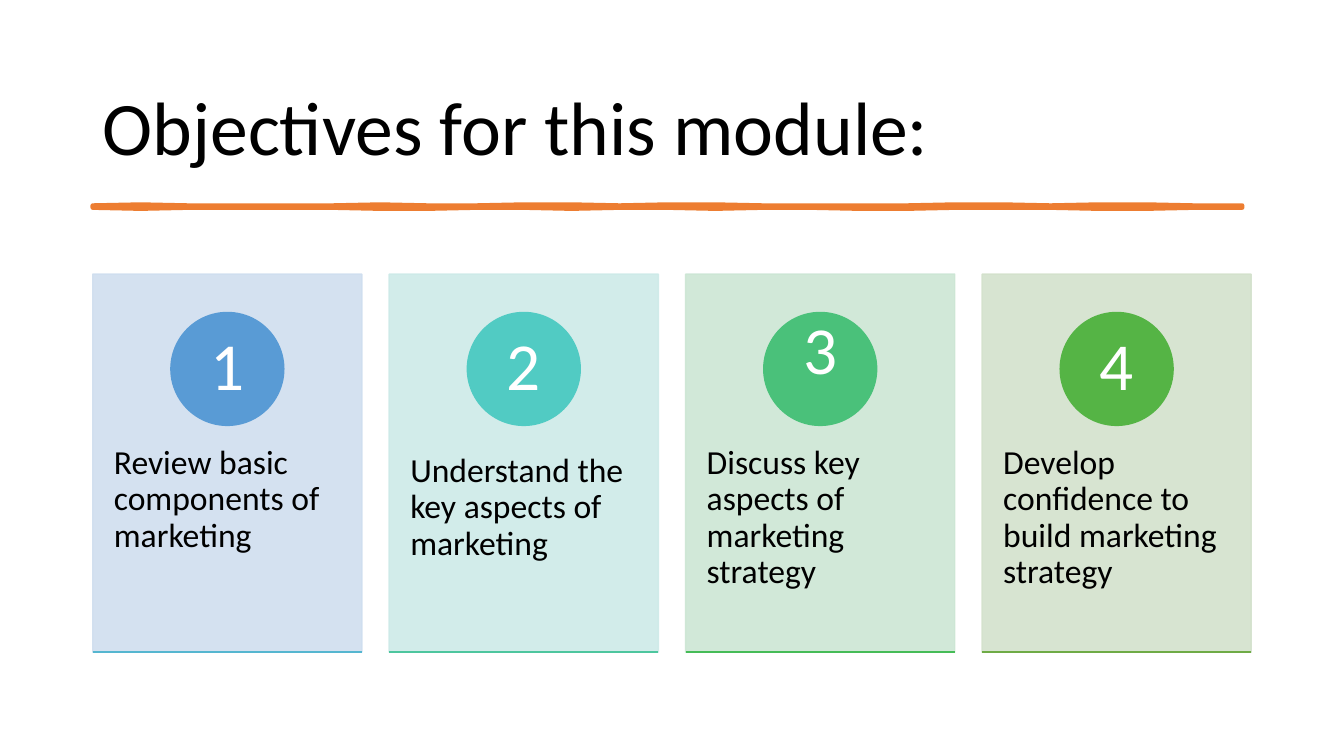
import pptx
import pptx.util
import pptx.dml.color
import pptx.enum.shapes
import pptx.enum.text
import pptx.oxml.ns
import lxml.etree
from dataclasses import dataclass

Inches = pptx.util.Inches
Pt = pptx.util.Pt
Kind = pptx.enum.shapes.MSO_SHAPE
Align = pptx.enum.text.PP_ALIGN
Anchor = pptx.enum.text.MSO_ANCHOR


@dataclass(frozen=True)
class Theme:
    font: str = "Calibri"
    ink: str = "000000"
    white: str = "FFFFFF"
    accent: str = "ED7D31"
    title: int = 54
    number: int = 48
    body: int = 24


THEME = Theme()

# Text, panel, circle, base line, text top, number top (both within the card)
CARDS = [
    ("Review basic components of marketing", "CFDEEF", "599BD5", "55B6D0", 1.34, 0.54),
    ("Understand the key aspects of marketing", "CDEAE8", "51CBC3", "4DC69E", 1.42, 0.54),
    ("Discuss key aspects of marketing strategy", "CCE6D4", "4AC17A", "46BC57", 1.34, 0.38),
    ("Develop confidence to build marketing strategy", "D3E1CC", "55B445", "6FAB46", 1.34, 0.54),
]

# Outward swell of the brush stroke at equal steps, in hundredths of an inch
UPPER = [0, 1, 0, 0, 0, 0, 1, 0, 0, 1, 1, 0, 1, 1, 0, 0, 0, 0, 1, 1, 0, 1, 1, 0, 0]
LOWER = [0, 1, 0, 0, 0, 0, 1, 1, 0, 0, 1, 0, 0, 1, 0, 0, 1, 1, 0, 0, 0, 1, 1, 0, 0]


def rgb(code):
    return pptx.dml.color.RGBColor.from_string(code)


def paint(shape, color, width=1, alpha=None):
    """Give a shape one colour for fill and line, with alpha in percent."""
    shape.shadow.inherit = False
    shape.fill.solid()
    shape.fill.fore_color.rgb = rgb(color)
    shape.line.color.rgb = rgb(color)
    shape.line.width = Pt(width)
    if alpha is not None:
        qn = pptx.oxml.ns.qn
        for node in shape.element.spPr.iter(qn("a:srgbClr")):
            lxml.etree.SubElement(node, qn("a:alpha"), val=str(alpha * 1000))


def write(slide, box, text, size, color, pad, align=Align.LEFT, anchor=Anchor.TOP):
    """Add a text box; pad holds the side and the top/bottom insets."""
    frame = slide.shapes.add_textbox(*map(Inches, box)).text_frame
    frame.word_wrap = True
    frame.vertical_anchor = anchor
    frame.margin_left = frame.margin_right = Inches(pad[0])
    frame.margin_top = frame.margin_bottom = Inches(pad[1])
    para = frame.paragraphs[0]
    para.text = text
    para.alignment = align
    para.line_spacing = 0.9
    para.font.name = THEME.font
    para.font.size = Pt(size)
    para.font.color.rgb = rgb(color)


def stroke(slide, box):
    """Draw the uneven brush stroke under the title."""
    left, top, width, height = box
    step = width / (len(UPPER) - 1)
    edge = [(left + i * step, top - s / 100) for i, s in enumerate(UPPER)]
    base = [(left + i * step, top + height + s / 100) for i, s in enumerate(LOWER)]
    dots = [(Inches(x), Inches(y)) for x, y in edge + base[::-1]]
    pen = slide.shapes.build_freeform(*dots[0])
    pen.add_line_segments(dots[1:], close=True)
    paint(pen.convert_to_shape(), THEME.accent, 3.25)


def rule(slide, box, color):
    """Draw a line along the bottom of the box."""
    left, top, width, height = box
    ends = (left, top + height, left + width, top + height)
    line = slide.shapes.add_connector(
        pptx.enum.shapes.MSO_CONNECTOR.STRAIGHT, *map(Inches, ends))
    line.line.color.rgb = rgb(color)
    line.line.width = Pt(1)
    lxml.etree.SubElement(line.element.spPr, pptx.oxml.ns.qn("a:effectLst"))


def card(slide, box, number, text, panel, disc, base, drop, rise):
    left, top, width, height = box
    back = slide.shapes.add_shape(Kind.RECTANGLE, *map(Inches, box))
    paint(back, panel, alpha=89)
    write(slide, (left, top + drop, width, 2.25), text,
          THEME.body, THEME.ink, (0.21, 0.36))
    size, inner = 1.12, 0.79
    mid = left + width / 2
    spot = (mid - size / 2, top + 0.38, size, size)
    paint(slide.shapes.add_shape(Kind.OVAL, *map(Inches, spot)), disc)
    write(slide, (mid - inner / 2, top + rise, inner, inner), str(number),
          THEME.number, THEME.white, (0.09, 0.01), Align.CENTER, Anchor.MIDDLE)
    rule(slide, box, base)


def header(slide, box):
    left, top, width, height = box
    write(slide, box, "Objectives for this module:", THEME.title, THEME.ink,
          (0.1, 0.05), anchor=Anchor.MIDDLE)
    stroke(slide, (left, top + height + 0.02, width - 0.1, 0.02))


def cards(slide, box, gap=0.27):
    left, top, width, height = box
    wide = (width - gap * (len(CARDS) - 1)) / len(CARDS)
    for i, parts in enumerate(CARDS):
        card(slide, (left + i * (wide + gap), top, wide, height), i + 1, *parts)


def main():
    deck = pptx.Presentation()
    deck.slide_width = Inches(13.33)
    deck.slide_height = Inches(7.5)
    slide = deck.slides.add_slide(deck.slide_layouts[6])
    header(slide, (0.92, 0.57, 11.5, 1.45))
    cards(slide, (0.92, 2.72, 11.49, 3.75))
    deck.save("out.pptx")


if __name__ == "__main__":
    main()
